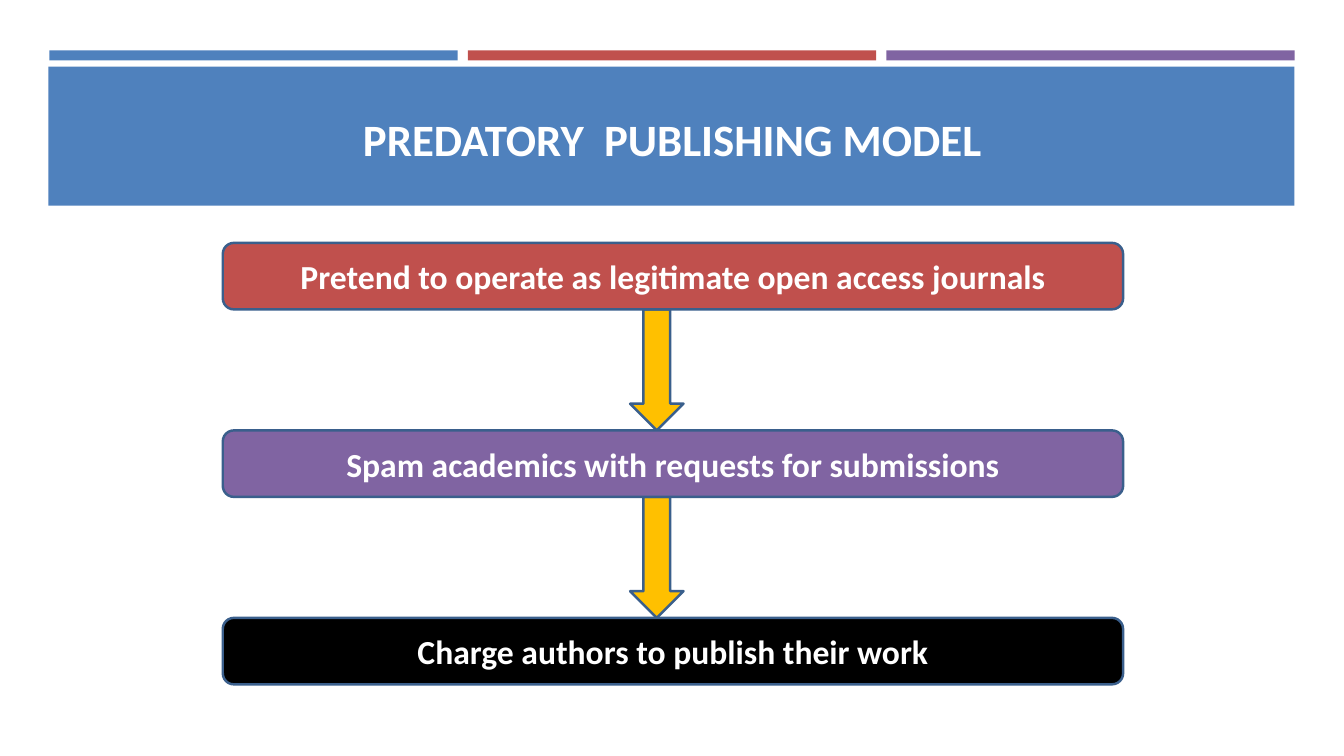
import pptx
import pptx.util
import pptx.dml.color
import pptx.enum.shapes
import pptx.enum.text

Inches = pptx.util.Inches
Pt = pptx.util.Pt
SHAPE = pptx.enum.shapes.MSO_SHAPE
ANCHOR = pptx.enum.text.MSO_ANCHOR

BLUE, RED, PURPLE = "4F81BD", "C0504D", "8064A2"
BLACK, WHITE, GOLD, OUTLINE = "000000", "FFFFFF", "FFC000", "3A5F8C"


def rgb(color):
    return pptx.dml.color.RGBColor.from_string(color)


def add_block(slide, kind, left, top, width, height, fill, line=None):
    sp = slide.shapes.add_shape(kind, Inches(left), Inches(top),
                                Inches(width), Inches(height))
    sp.shadow.inherit = False
    sp.fill.solid()
    sp.fill.fore_color.rgb = rgb(fill)
    if line:
        sp.line.color.rgb = rgb(line)
        sp.line.width = Pt(1.75)
    else:
        sp.line.fill.background()
    return sp


def write(sp, text, size, anchor):
    tf = sp.text_frame
    tf.word_wrap = True
    tf.vertical_anchor = anchor
    p = tf.paragraphs[0]
    p.alignment = pptx.enum.text.PP_ALIGN.CENTER
    r = p.add_run()
    r.text = text
    r.font.name = "Calibri"
    r.font.size = Pt(size)
    r.font.bold = True
    r.font.color.rgb = rgb(WHITE)


def add_header(slide, title):
    # Three accent bars above the title band
    for i, color in enumerate((BLUE, RED, PURPLE)):
        add_block(slide, SHAPE.RECTANGLE, 0.49 + 4.15 * i, 0.5, 4.05, 0.1, color)
    add_block(slide, SHAPE.RECTANGLE, 0.48, 0.66, 12.36, 1.38, BLUE)
    box = slide.shapes.add_textbox(Inches(0.64), Inches(0.61),
                                   Inches(12.06), Inches(1.08))
    write(box, title, 32, ANCHOR.BOTTOM)


def add_flow(slide, steps):
    first_top, pitch, height = 2.41, 1.86, 0.66
    tops = [first_top + pitch * i for i in range(len(steps))]
    # Arrows fill the gaps and lie behind the steps
    for top in tops[:-1]:
        add_block(slide, SHAPE.DOWN_ARROW, 6.25, top + height, 0.53,
                  pitch - height, GOLD, OUTLINE)
    for top, (text, color) in zip(tops, steps):
        sp = add_block(slide, SHAPE.ROUNDED_RECTANGLE, 2.21, top, 8.93,
                       height, color, OUTLINE)
        write(sp, text, 24, ANCHOR.MIDDLE)


def main():
    prs = pptx.Presentation()
    prs.slide_width = Inches(13.33)
    prs.slide_height = Inches(7.5)
    slide = prs.slides.add_slide(prs.slide_layouts[6])
    add_header(slide, "PREDATORY  PUBLISHING MODEL")
    add_flow(slide, [
        ("Pretend to operate as legitimate open access journals", RED),
        ("Spam academics with requests for submissions", PURPLE),
        ("Charge authors to publish their work", BLACK),
    ])
    prs.save("out.pptx")


if __name__ == "__main__":
    main()
